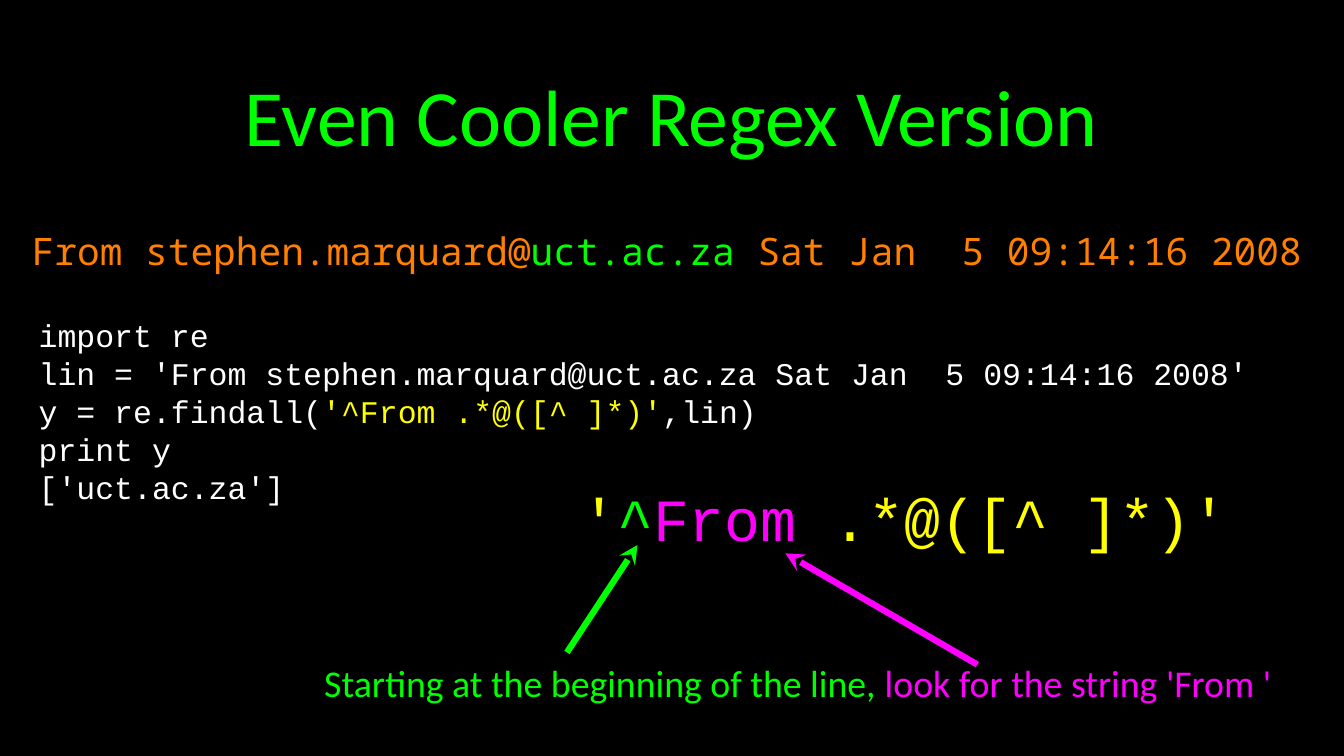
from dataclasses import dataclass

from lxml import etree
from pptx import Presentation
from pptx.dml.color import RGBColor
from pptx.enum.shapes import MSO_CONNECTOR
from pptx.enum.text import MSO_ANCHOR, PP_ALIGN
from pptx.oxml.ns import qn
from pptx.util import Cm, Pt

STRAIGHT = MSO_CONNECTOR.STRAIGHT
MIDDLE = MSO_ANCHOR.MIDDLE
LEFT, CENTER = PP_ALIGN.LEFT, PP_ALIGN.CENTER


@dataclass(frozen=True)
class Theme:
    black: str = "000000"
    white: str = "FFFFFF"
    green: str = "00FF00"
    orange: str = "FF7F00"
    yellow: str = "FFFF00"
    magenta: str = "FF00FF"
    body_font: str = "Calibri"
    code_font: str = "Courier New"
    mail_font: str = "Noto Sans Mono"
    title_size: int = 76
    pattern_size: int = 57
    text_size: int = 36
    code_size: int = 30
    arrow_width: int = 6


THEME = Theme()


def add_text(page, area, lines, font, size, align=LEFT, wrap=True):
    """Write lines, each a list of (text, colour) spans, into area (cm)."""
    box = page.shapes.add_textbox(*(Cm(length) for length in area))
    frame = box.text_frame
    frame.word_wrap = wrap
    frame.vertical_anchor = MIDDLE
    frame.margin_left = frame.margin_right = 0
    frame.margin_top = frame.margin_bottom = 0
    for number, spans in enumerate(lines):
        para = frame.paragraphs[0] if number == 0 else frame.add_paragraph()
        para.alignment = align
        for text, colour in spans:
            span = para.add_run()
            span.text = text
            span.font.name = font
            span.font.size = Pt(size)
            span.font.color.rgb = RGBColor.from_string(colour)


def add_arrow(page, tip, tail, colour):
    """Draw a line from tip to tail with a stealth head at the tip."""
    arrow = page.shapes.add_connector(
        STRAIGHT, *(Cm(length) for length in (*tip, *tail)))
    arrow.line.width = Pt(THEME.arrow_width)
    arrow.line.color.rgb = RGBColor.from_string(colour)
    etree.SubElement(arrow.line._get_or_add_ln(), qn("a:headEnd"), type="stealth")
    etree.SubElement(arrow._element.spPr, qn("a:effectLst"))


def add_title(page, area):
    add_text(page, area, [[("Even Cooler Regex Version", THEME.green)]],
             THEME.body_font, THEME.title_size, CENTER)


def add_mail_line(page, area):
    spans = [("From stephen.marquard@", THEME.orange),
             ("uct.ac.za", THEME.green),
             (" Sat Jan  5 09:14:16 2008", THEME.orange)]
    add_text(page, area, [spans], THEME.mail_font, THEME.text_size, wrap=False)


def add_code(page, area):
    white = THEME.white
    lines = [
        [("import re", white)],
        [("lin = 'From stephen.marquard@uct.ac.za Sat Jan  5 09:14:16 2008'", white)],
        [("y = re.findall(", white),
         ("'^From .*@([^ ]*)'", THEME.yellow),
         (",lin)", white)],
        [("print y", white)],
        [("['uct.ac.za']", white)],
    ]
    add_text(page, area, lines, THEME.code_font, THEME.code_size)


def add_explained_pattern(page, area):
    """Place the large pattern, its caption and the arrows joining them."""
    left, top, width, height = area
    pattern = [("'", THEME.yellow), ("^", THEME.green),
               ("From ", THEME.magenta), (".*@([^ ]*)'", THEME.yellow)]
    caption = [("Starting at the beginning of the line, ", THEME.green),
               ("look for the string 'From ' ", THEME.magenta)]
    caption_height = 1.73
    add_text(page, (left + 8.96, top, 21.95, 2.44), [pattern],
             THEME.code_font, THEME.pattern_size, wrap=False)
    add_text(page, (left, top + height - caption_height, width, caption_height),
             [caption], THEME.body_font, THEME.text_size, CENTER)
    for tip, tail, colour in (
        ((10.85, 2.13), (8.48, 5.74), THEME.green),
        ((15.82, 2.41), (22.27, 6.15), THEME.magenta),
    ):
        add_arrow(page, (left + tip[0], top + tip[1]),
                  (left + tail[0], top + tail[1]), colour)


def main():
    deck = Presentation()
    deck.slide_width, deck.slide_height = Cm(45.16), Cm(25.4)
    page = deck.slides.add_slide(deck.slide_layouts[6])
    page.background.fill.solid()
    page.background.fill.fore_color.rgb = RGBColor.from_string(THEME.black)
    add_title(page, (3.2, 0.66, 38.71, 6.38))
    add_mail_line(page, (1.07, 7.47, 43, 1.88))
    add_code(page, (1.3, 10.67, 43.79, 6.27))
    add_explained_pattern(page, (10.57, 16.18, 32.77, 7.6))
    deck.save("out.pptx")


if __name__ == "__main__":
    main()
